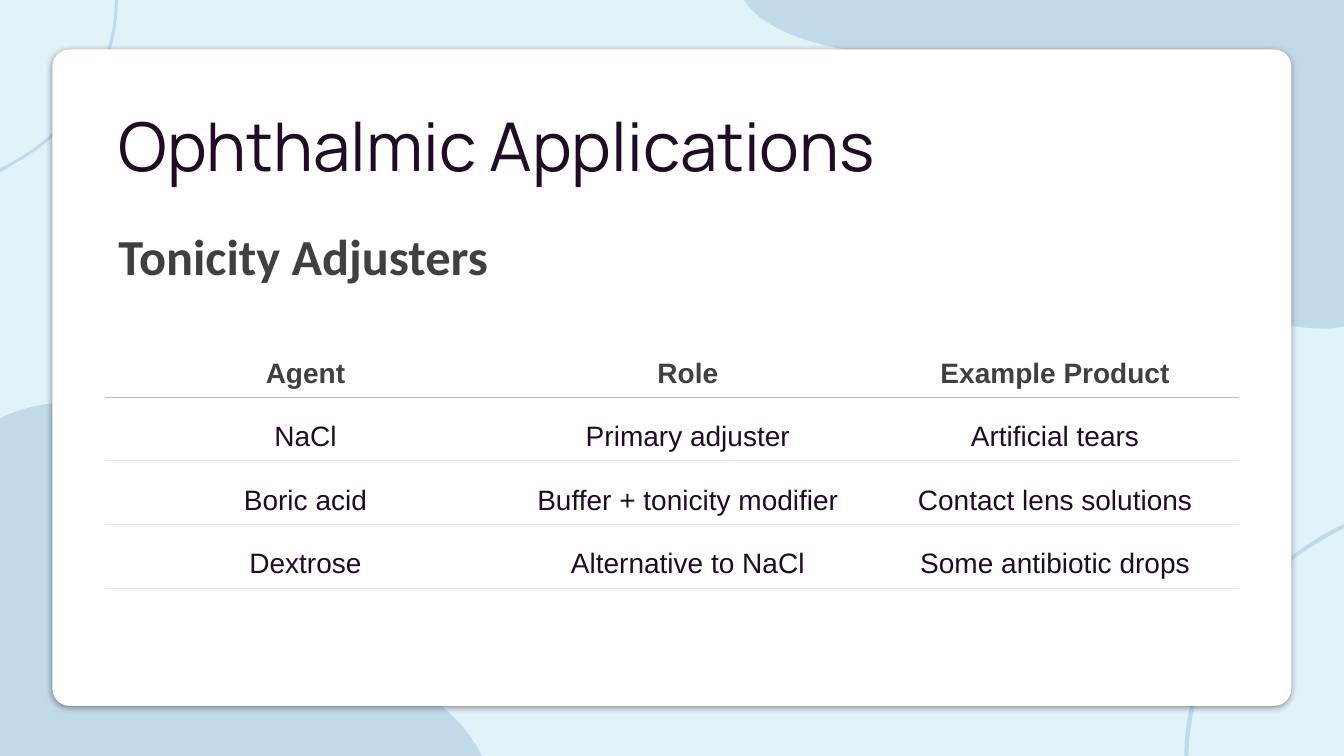
from lxml.etree import SubElement
from pptx import Presentation
from pptx.dml.color import RGBColor
from pptx.enum.shapes import MSO_SHAPE
from pptx.enum.text import MSO_ANCHOR, MSO_AUTO_SIZE, PP_ALIGN
from pptx.oxml.ns import qn
from pptx.util import Pt

INK = "210A26"
GREY = "404040"
WHITE = "FFFFFF"
SKY = "DFF3F8"
WAVE = "A0BFDB"
HEADER_RULE = "BBBBBB"
ROW_RULE = "E5E5E5"

LOWER_RIGHT_ARC = [
    (848.9, 540),
    (849.6, 505.4, 861.1, 470.2, 882, 442.1),
    (902.2, 414, 929.5, 392.4, 960, 377.3),
    (960, 374.4),
    (957.1, 375.8, 953.3, 377.3, 949.7, 379.4),
    (925.2, 393.1, 902.2, 411.8, 884.2, 434.2),
    (866.2, 457.9, 853.2, 484.6, 848.2, 514.1),
    (846.7, 522.7, 846, 531.4, 846, 540),
]
LOWER_LEFT_WAVE = [
    (43.2, 288),
    (20.9, 288, 0, 298.8, 0, 298.8),
    (0, 540),
    (344.2, 540),
    (300.2, 452.9, 164.2, 469.4, 107.3, 452.2),
    (51.1, 435.6, 113, 352.1, 82.8, 307.4),
    (72, 292.3, 57.6, 288, 43.2, 288),
]
UPPER_RIGHT_WAVE = [
    (531.4, 0),
    (547.2, 25.2, 599, 41.8, 683.3, 41.8),
    (686.2, 41.8, 689.8, 41.8, 692.6, 41.8),
    (694.1, 41.8, 694.8, 41.8, 696.2, 41.8),
    (822.2, 41.8, 769.7, 153.4, 863.3, 211.7),
    (888.5, 227.5, 920.9, 234.7, 946.1, 234.7),
    (951.1, 234.7, 955.4, 234, 960, 233.3),
    (960, 0),
]
UPPER_LEFT_ARC = [
    (82.1, 0),
    (82.1, 25.9, 73.4, 51.8, 58.3, 72.7),
    (43.2, 92.9, 22.3, 109.4, 0, 120.2),
    (0, 123.1),
    (2.9, 121.7, 5, 120.2, 7.2, 118.8),
    (25.9, 108.7, 43.2, 95, 56.2, 78.5),
    (69.8, 61.2, 79.2, 41, 82.8, 19.4),
    (83.5, 13, 84.2, 6.5, 84.2, 0),
]

TONICITY_ROWS = [
    ("Agent", "Role", "Example Product"),
    ("NaCl", "Primary adjuster", "Artificial tears"),
    ("Boric acid", "Buffer + tonicity modifier", "Contact lens solutions"),
    ("Dextrose", "Alternative to NaCl", "Some antibiotic drops"),
]


def paint(fill, colour):
    fill.solid()
    fill.fore_color.rgb = RGBColor.from_string(colour)


def bend(wave, segments):
    lines = iter(list(wave._element.iter(qn("a:lnTo"))))
    for segment in segments:
        first = next(lines)
        if len(segment) == 6:
            first.tag = qn("a:cubicBezTo")
            for _ in range(2):
                control = next(lines)
                first.append(control[0])
                control.getparent().remove(control)


def add_wave(page, outline):
    start, *segments = outline
    points = [(Pt(x), Pt(y)) for segment in segments
              for x, y in zip(segment[::2], segment[1::2])]
    builder = page.shapes.build_freeform(Pt(start[0]), Pt(start[1]))
    builder.add_line_segments(points, close=True)
    wave = builder.convert_to_shape()
    bend(wave, segments)
    wave.shadow.inherit = False
    wave.line.fill.background()
    paint(wave.fill, WAVE)
    colour = wave._element.spPr.find(qn("a:solidFill")).find(qn("a:srgbClr"))
    SubElement(colour, qn("a:alpha"), val="48000")


def add_card(page):
    card = page.shapes.add_shape(MSO_SHAPE.ROUNDED_RECTANGLE,
                                 Pt(37.4), Pt(35.3), Pt(885), Pt(468.9))
    card.adjustments[0] = 0.026
    card.shadow.inherit = False
    paint(card.fill, WHITE)
    card.line.fill.background()
    effects = card._element.spPr.find(qn("a:effectLst"))
    shadow = SubElement(effects, qn("a:outerShdw"), blurRad=str(Pt(4.5)), dist=str(Pt(1.5)),
                        dir="5400000", algn="bl", rotWithShape="0")
    colour = SubElement(shadow, qn("a:srgbClr"), val=INK)
    SubElement(colour, qn("a:alpha"), val="50000")


def write(para, text, font, size, colour, bold=False):
    span = para.add_run()
    span.text = text
    span.font.name = font
    span.font.size = Pt(size)
    span.font.bold = bold
    span.font.color.rgb = RGBColor.from_string(colour)


def place(box, left, top, width, height):
    box.left, box.top, box.width, box.height = Pt(left), Pt(top), Pt(width), Pt(height)
    box._element.getparent().append(box._element)
    frame = box.text_frame
    frame.word_wrap = True
    frame.auto_size = MSO_AUTO_SIZE.NONE
    frame.vertical_anchor = MSO_ANCHOR.TOP
    frame.margin_left = frame.margin_right = Pt(9.6)
    frame.margin_top = frame.margin_bottom = Pt(9.6)
    para = frame.paragraphs[0]
    para.alignment = PP_ALIGN.LEFT
    para.space_before = Pt(0)
    return para


def add_title(page, text):
    para = place(page.shapes.title, 75, 56.2, 810, 75)
    para.line_spacing = 1.15
    write(para, text, "Manrope", 48, INK)


def add_heading(page, text):
    para = place(page.placeholders[1], 75, 151.2, 818, 309.6)
    properties = para._p.get_or_add_pPr()
    properties.set("marL", "0")
    properties.set("indent", "0")
    SubElement(properties, qn("a:buNone"))
    para.line_spacing = 1.0
    para.space_after = Pt(10.3)
    write(para, text, "Calibri", 36, GREY, bold=True)


def set_border(cell, side, colour=None):
    line = SubElement(cell._tc.get_or_add_tcPr(), qn(f"a:ln{side}"), w=str(Pt(0.72)))
    if colour:
        SubElement(SubElement(line, qn("a:solidFill")), qn("a:srgbClr"), val=colour)
    else:
        SubElement(line, qn("a:noFill"))


def fill_cell(cell, text, is_header, is_first, rule_above, rule_below):
    for side, colour in zip("LRTB", (None, None, rule_above, rule_below)):
        set_border(cell, side, colour)
    paint(cell.fill, WHITE)
    cell.vertical_anchor = MSO_ANCHOR.MIDDLE
    cell.margin_left = Pt(7.2 if is_first else 6)
    cell.margin_right = cell.margin_top = cell.margin_bottom = Pt(6)
    para = cell.text_frame.paragraphs[0]
    para.alignment = PP_ALIGN.CENTER
    para.line_spacing = 1.5
    write(para, text, "Arial", 20, GREY if is_header else INK, bold=is_header)


def add_tonicity_table(page):
    widths = (285.2, 262.3, 262.3)
    rules = [None, HEADER_RULE] + [ROW_RULE] * (len(TONICITY_ROWS) - 1)
    table = page.shapes.add_table(len(TONICITY_ROWS), len(widths), Pt(75), Pt(238.3),
                                  Pt(sum(widths)), Pt(174.24)).table
    table.first_row = table.horz_banding = False
    for column, width in zip(table.columns, widths):
        column.width = Pt(width)
    for row, texts in enumerate(TONICITY_ROWS):
        for column, text in enumerate(texts):
            fill_cell(table.cell(row, column), text, row == 0, column == 0,
                      rules[row], rules[row + 1])


def main():
    deck = Presentation()
    deck.slide_width, deck.slide_height = Pt(960), Pt(540)
    page = deck.slides.add_slide(deck.slide_layouts[1])
    paint(page.background.fill, SKY)
    for outline in (LOWER_RIGHT_ARC, LOWER_LEFT_WAVE, UPPER_RIGHT_WAVE, UPPER_LEFT_ARC):
        add_wave(page, outline)
    add_card(page)
    add_title(page, "Ophthalmic Applications")
    add_heading(page, "Tonicity Adjusters")
    add_tonicity_table(page)
    deck.save("out.pptx")


if __name__ == "__main__":
    main()
